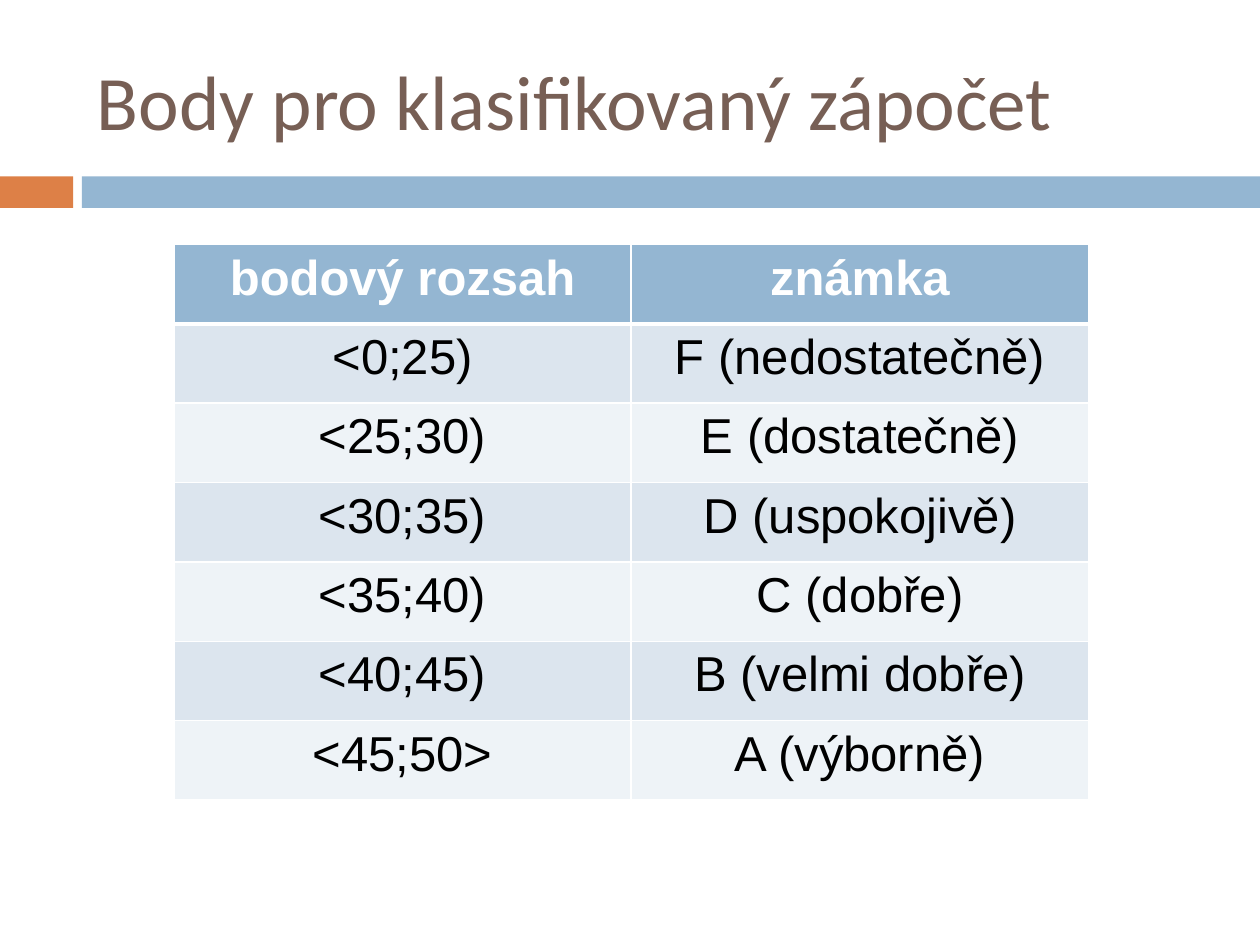
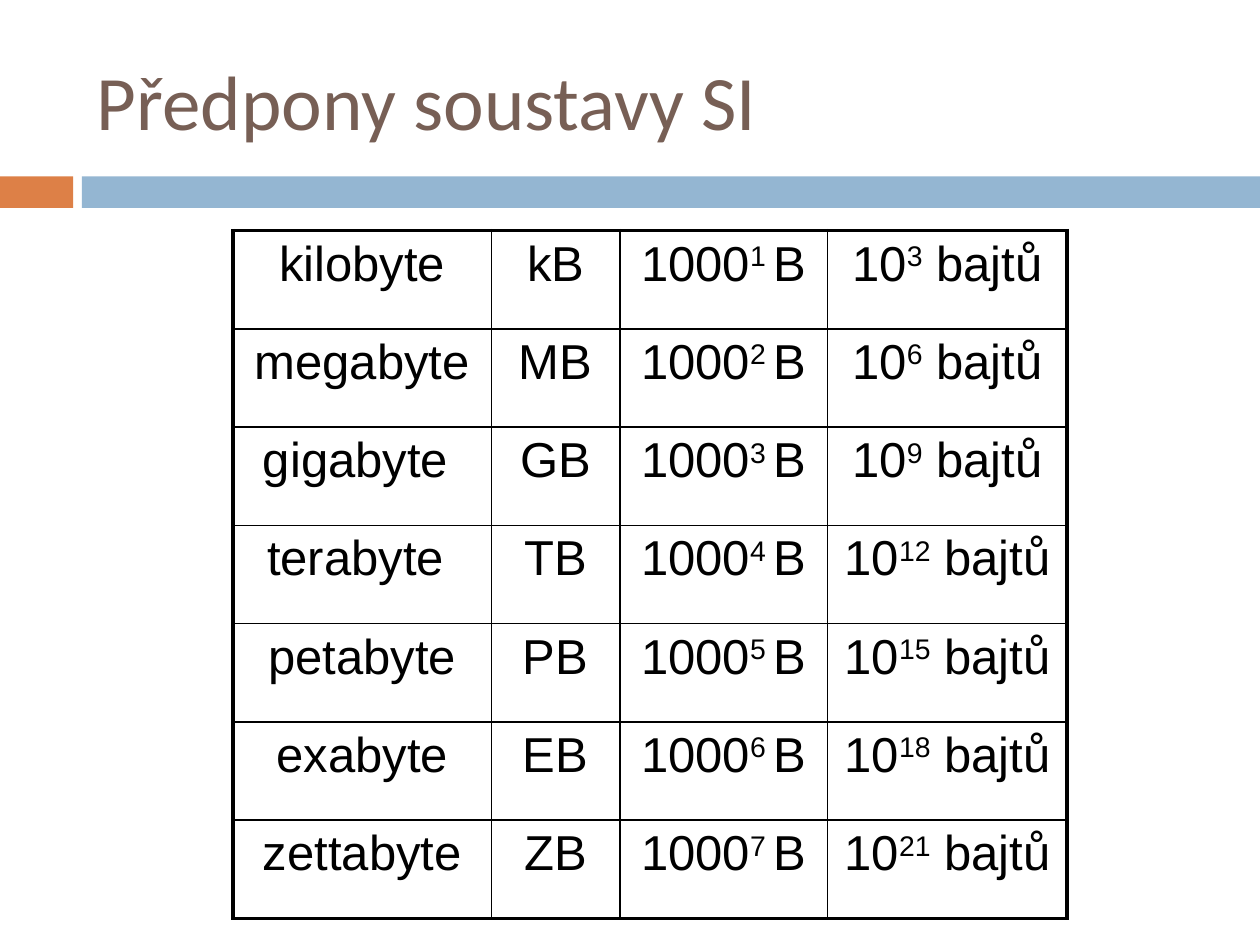
from dataclasses import dataclass

from lxml.etree import SubElement
from pptx import Presentation
from pptx.dml.color import RGBColor
from pptx.enum.shapes import MSO_SHAPE
from pptx.enum.text import MSO_ANCHOR, PP_ALIGN
from pptx.oxml.ns import qn
from pptx.util import Inches, Pt


@dataclass(frozen=True)
class Theme:
    orange: str = "DD8047"
    blue: str = "94B6D2"
    brown: str = "775F55"
    white: str = "FFFFFF"
    black: str = "000000"
    bands: tuple = ("EEF3F7", "DCE5EE")
    title_font: str = "Calibri"
    body_font: str = "Arial"
    title_size: int = 44
    body_size: int = 28


T = Theme()


def write(tf, text, font=T.body_font, size=T.body_size, color=T.black,
          bold=False, align=PP_ALIGN.CENTER):
    """Fill a text frame; text between a pair of ^ marks is superscript."""
    p = tf.paragraphs[0]
    p.alignment = align
    for i, part in enumerate(text.split("^")):
        r = p.add_run()
        r.text = part
        r.font.name, r.font.size, r.font.bold = font, Pt(size), bold
        r.font.color.rgb = RGBColor.from_string(color)
        if i % 2:
            r.font._element.set("baseline", "30000")


def add_border(cell, side, width, color):
    ln = SubElement(cell._tc.get_or_add_tcPr(), qn(f"a:ln{side}"), w=str(Pt(width)))
    SubElement(SubElement(ln, qn("a:solidFill")), qn("a:srgbClr"), val=color)


prs = Presentation()
prs.slide_width, prs.slide_height = Inches(10), Inches(7.5)

# Content: grades by points, and byte units by power of 1000
grades = [
    ("bodový rozsah", "známka"),
    ("<0;25)", "F (nedostatečně)"),
    ("<25;30)", "E (dostatečně)"),
    ("<30;35)", "D (uspokojivě)"),
    ("<35;40)", "C (dobře)"),
    ("<40;45)", "B (velmi dobře)"),
    ("<45;50>", "A (výborně)"),
]
units = ["kilobyte", "megabyte", "gigabyte ", "terabyte ",
         "petabyte", "exabyte", "zettabyte"]
prefixes = [
    (unit, f"{symbol}B", f"1000^{n} ^B", f"10^{3 * n}^ bajtů")
    for n, (unit, symbol) in enumerate(zip(units, "kMGTPEZ"), 1)
]

# Rules are listed by grid line: top to bottom, then left to right
pages = [
    dict(title="Body pro klasifikovaný zápočet", rows=grades, header=True,
         left=1.38, top=1.94, cols=[3.63, 3.63], row_height=0.63,
         line=T.white, h_rules=[1, 3] + [1] * 6, v_rules=[1] * 3),
    dict(title="Předpony soustavy SI", rows=prefixes, header=False,
         left=1.85, top=1.83, cols=[2.05, 1.02, 1.65, 1.9], row_height=0.78,
         line=T.black, h_rules=[2.25] + [1] * 6 + [2.25],
         v_rules=[2.25] + [1] * 3 + [2.25]),
]

for page in pages:
    s = prs.slides.add_slide(prs.slide_layouts[6])

    # Two-part band under the title
    for left, width, color in ((0, 0.58, T.orange), (0.65, 9.35, T.blue)):
        sp = s.shapes.add_shape(MSO_SHAPE.RECTANGLE, Inches(left), Inches(1.4),
                                Inches(width), Inches(0.25))
        sp.shadow.inherit = False
        sp.fill.solid()
        sp.fill.fore_color.rgb = RGBColor.from_string(color)
        sp.line.fill.background()

    # Title
    tf = s.shapes.add_textbox(Inches(0.67), Inches(0.25),
                              Inches(8.92), Inches(1.08)).text_frame
    tf.word_wrap = True
    tf.vertical_anchor = MSO_ANCHOR.MIDDLE
    write(tf, page["title"], font=T.title_font, size=T.title_size,
          color=T.brown, align=PP_ALIGN.LEFT)

    # Table
    rows, cols = page["rows"], page["cols"]
    table = s.shapes.add_table(
        len(rows), len(cols), Inches(page["left"]), Inches(page["top"]),
        Inches(sum(cols)), Inches(page["row_height"] * len(rows))).table
    table.first_row = table.horz_banding = False
    for column, width in zip(table.columns, cols):
        column.width = Inches(width)

    h, v = page["h_rules"], page["v_rules"]
    for i, row in enumerate(rows):
        table.rows[i].height = Inches(page["row_height"])
        for j, text in enumerate(row):
            cell = table.cell(i, j)
            is_header = page["header"] and i == 0
            write(cell.text_frame, text, bold=is_header,
                  color=T.white if is_header else T.black)
            for side, width in zip("LRTB", (v[j], v[j + 1], h[i], h[i + 1])):
                add_border(cell, side, width, page["line"])
            if page["header"]:
                cell.fill.solid()
                cell.fill.fore_color.rgb = RGBColor.from_string(
                    T.blue if is_header else T.bands[i % 2])
            else:
                cell.fill.background()

prs.save("out.pptx")
